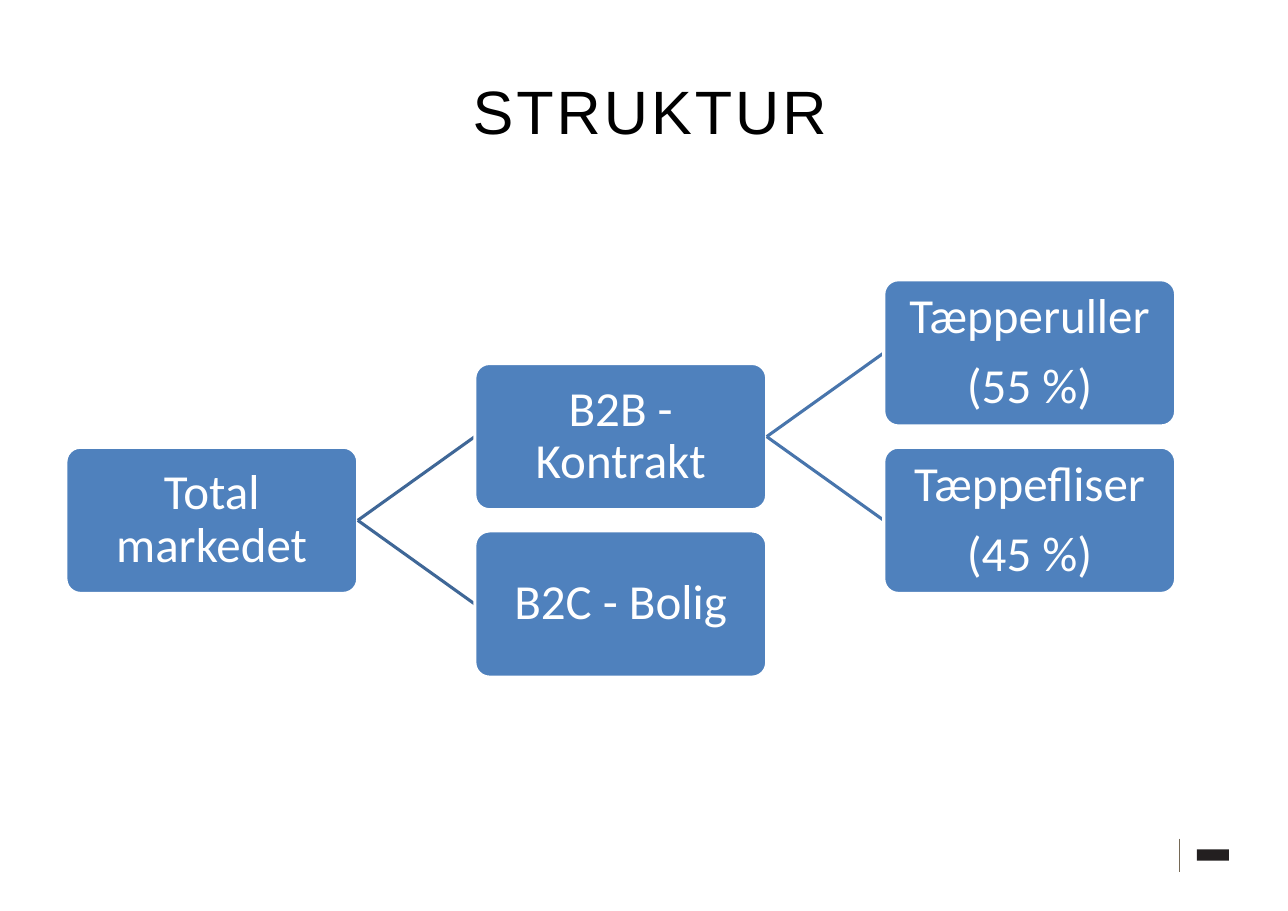
from lxml import etree
from pptx import Presentation
from pptx.dml.color import RGBColor
from pptx.enum.shapes import MSO_CONNECTOR, MSO_SHAPE
from pptx.enum.text import MSO_ANCHOR, PP_ALIGN
from pptx.oxml.ns import qn
from pptx.util import Cm, Pt

BOX_W, BOX_H = 6.73, 3.37
COLUMN_STEP, ROW_STEP = 9.43, 1.93
LINE_COLORS = ["3F6797", "4875AC"]
MARKET = (["Total markedet"], [
    (["B2B - Kontrakt"], [
        (["Tæpperuller", "(55 %)"], []),
        (["Tæppefliser", "(45 %)"], []),
    ]),
    (["B2C - Bolig"], []),
])


def rgb(color):
    """Turn a hex string into a colour."""
    return RGBColor.from_string(color)


def set_margins(tf, x, y):
    """Set the side and the top and bottom margins of a text frame in cm."""
    tf.margin_left = tf.margin_right = Cm(x)
    tf.margin_top = tf.margin_bottom = Cm(y)


def add_run(p, text, font, size, color):
    """Add a formatted run to a paragraph."""
    r = p.add_run()
    r.text = text
    r.font.name = font
    r.font.size = Pt(size)
    r.font.color.rgb = rgb(color)
    return r


def add_line(slide, x1, y1, x2, y2, color, width):
    """Add a straight line without a shadow."""
    line = slide.shapes.add_connector(
        MSO_CONNECTOR.STRAIGHT, Cm(x1), Cm(y1), Cm(x2), Cm(y2))
    line.line.color.rgb = rgb(color)
    line.line.width = Pt(width)
    etree.SubElement(line._element.spPr, qn("a:effectLst"))
    return line


def add_title(slide, x, y, w, h, text):
    """Place the centred, letter-spaced title in its box."""
    tf = slide.shapes.add_textbox(Cm(x), Cm(y), Cm(w), Cm(h)).text_frame
    tf.word_wrap = True
    set_margins(tf, 0, 0.28)
    p = tf.paragraphs[0]
    p.alignment = PP_ALIGN.CENTER
    r = add_run(p, text, "Arial", 40, "000000")
    r.font._element.set("spc", "200")


def add_box(slide, x, y, lines):
    """Place one rounded box with a paragraph for each line."""
    sp = slide.shapes.add_shape(
        MSO_SHAPE.ROUNDED_RECTANGLE, Cm(x), Cm(y), Cm(BOX_W), Cm(BOX_H))
    sp.adjustments[0] = 0.1
    sp.shadow.inherit = False
    sp.fill.solid()
    sp.fill.fore_color.rgb = rgb("4F81BD")
    sp.line.color.rgb = rgb("FFFFFF")
    sp.line.width = Pt(2)
    tf = sp.text_frame
    tf.word_wrap = True
    tf.vertical_anchor = MSO_ANCHOR.MIDDLE
    set_margins(tf, 0.05, 0.05)
    for i, text in enumerate(lines):
        p = tf.add_paragraph() if i else tf.paragraphs[0]
        p.alignment = PP_ALIGN.CENTER
        p.line_spacing = 0.9
        p.space_after = Pt(11.2)
        add_run(p, text, "Calibri", 32, "FFFFFF")
    return sp


def add_tree(slide, x, y, node, level=0):
    """Place a box at x, y and its branches one column to the right."""
    lines, children = node
    parent = add_box(slide, x, y, lines)
    child_x, mid = x + COLUMN_STEP, y + BOX_H / 2
    for child, side in zip(children, (-1, 1)):
        shift = side * ROW_STEP
        branch = add_line(slide, x + BOX_W, mid, child_x, mid + shift,
                          LINE_COLORS[level], 2)
        branch.begin_connect(parent, 3)
        child_box = add_tree(slide, child_x, y + shift, child, level + 1)
        branch.end_connect(child_box, 1)
    return parent


def add_footer(slide, x, y, w, h):
    """Place the thin rule and the plain brand mark."""
    add_line(slide, x, y, x, y + h, "756956", 0.25)
    mark_w, mark_h = 0.74, 0.26
    mark = slide.shapes.add_shape(
        MSO_SHAPE.RECTANGLE, Cm(x + w - mark_w), Cm(y + (h - mark_h) / 2),
        Cm(mark_w), Cm(mark_h))
    mark.shadow.inherit = False
    mark.fill.solid()
    mark.fill.fore_color.rgb = rgb("231F20")
    mark.line.fill.background()


def main():
    """Build the market structure slide."""
    prs = Presentation()
    prs.slide_width, prs.slide_height = Cm(29.7), Cm(21)
    slide = prs.slides.add_slide(prs.slide_layouts[6])
    add_footer(slide, 27.2, 19.33, 1.14, 0.76)
    add_title(slide, 2.59, 1.4, 24.79, 1.7, "STRUKTUR")
    add_tree(slide, 1.52, 10.31, MARKET)
    prs.save("out.pptx")


if __name__ == "__main__":
    main()
